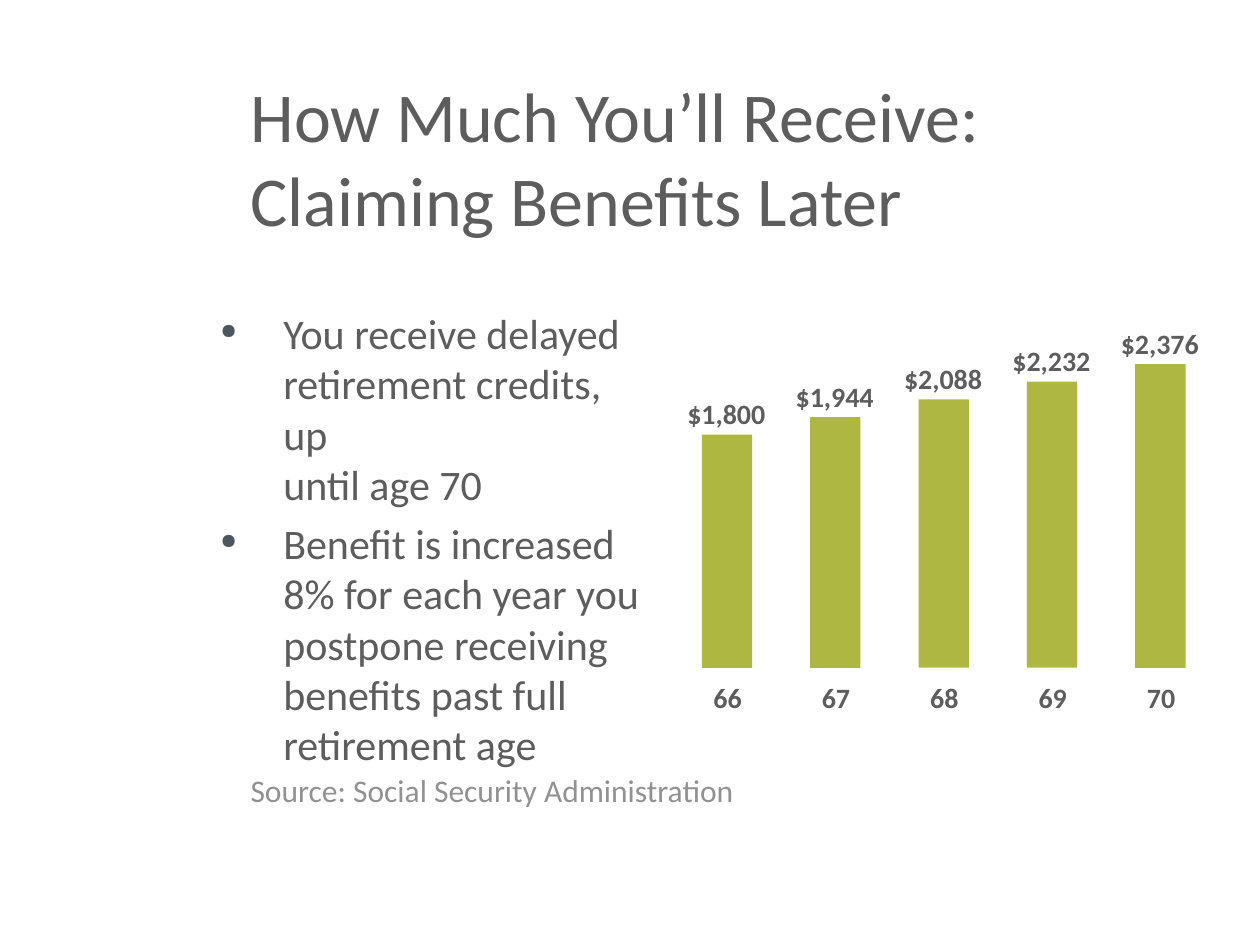
from lxml import etree
from pptx import Presentation
from pptx import util as u
from pptx.dml.color import RGBColor
from pptx.enum import shapes, text
from pptx.oxml import ns

GREY, LIGHT, GREEN, BULLET = "5D5D5D", "919191", "AFB743", "4D565C"
BENEFITS = {"66": "$1,800", "67": "$1,944", "68": "$2,088", "69": "$2,232", "70": "$2,376"}
STEP, BASE, FIRST_HEIGHT, RISE = 0.86, 5.3, 1.85, 0.14


def color(value):
    """Return the colour for a hex string."""
    return RGBColor.from_string(value)


def add_runs(p, content, size, fill=GREY, bold=False):
    """Add the content to a paragraph, with a line break at each newline."""
    for i, line in enumerate(content.split("\n")):
        if i:
            p.add_line_break()
        r = p.add_run()
        r.text = line
        r.font.name = "Calibri"
        r.font.size = u.Pt(size)
        r.font.bold = bold
        r.font.color.rgb = color(fill)


def add_frame(s, x, y, w, h, wrap=True):
    """Add an empty text box and return its text frame."""
    tf = s.shapes.add_textbox(*map(u.Inches, (x, y, w, h))).text_frame
    tf.word_wrap = wrap
    return tf


def add_label(s, content, box, size=16, fill=GREY, bold=True, wrap=True,
              align=text.PP_ALIGN.CENTER):
    """Add a text box with one paragraph and return its text frame."""
    tf = add_frame(s, *box, wrap)
    p = tf.paragraphs[0]
    p.alignment = align
    add_runs(p, content, size, fill, bold)
    return tf


def add_bullet(p):
    """Give a paragraph a hanging indent and a small round bullet."""
    pPr = p._p.get_or_add_pPr()
    pPr.set("marL", str(u.Inches(0.5)))
    pPr.set("indent", str(-u.Inches(0.5)))
    clr = etree.SubElement(pPr, ns.qn("a:buClr"))
    etree.SubElement(clr, ns.qn("a:srgbClr"), val=BULLET)
    etree.SubElement(pPr, ns.qn("a:buSzPct"), val="50000")
    etree.SubElement(pPr, ns.qn("a:buChar"), char="●")


def add_bullets(s, items, box):
    """Add a text box with a bulleted list."""
    tf = add_frame(s, *box)
    for i, item in enumerate(items):
        p = tf.add_paragraph() if i else tf.paragraphs[0]
        add_bullet(p)
        if i:
            p.space_before = u.Pt(4.8)
        add_runs(p, item, 24)


def add_bar(s, x, y, w, h):
    """Add one plain bar."""
    sp = s.shapes.add_shape(shapes.MSO_SHAPE.RECTANGLE, *map(u.Inches, (x, y, w, h)))
    sp.shadow.inherit = False
    sp.fill.solid()
    sp.fill.fore_color.rgb = color(GREEN)
    sp.line.fill.background()


def add_benefit_bars(s):
    """Add a bar with its age and benefit for each claiming age."""
    for i, (age, benefit) in enumerate(BENEFITS.items()):
        x, h = 5.57 + i * STEP, FIRST_HEIGHT + i * RISE
        add_bar(s, x, BASE - h, 0.4, h)
        add_label(s, age, (x - 0.07, BASE + 0.05, 0.55, 0.37))
        add_label(s, benefit, (x - 0.22, BASE - h - 0.35, 0.83, 0.37), wrap=False)


def main():
    """Build the slide and save it."""
    prs = Presentation()
    prs.slide_width, prs.slide_height = u.Inches(10), u.Inches(7.5)
    s = prs.slides.add_slide(prs.slide_layouts[6])
    left = text.PP_ALIGN.LEFT
    tf = add_label(s, "How Much You’ll Receive: \nClaiming Benefits Later",
                   (1.89, 0.58, 6.7, 1.33), 40, bold=False, align=left)
    tf.vertical_anchor = text.MSO_ANCHOR.MIDDLE
    add_bullets(s, [
        "You receive delayed retirement credits, up\nuntil age 70",
        "Benefit is increased \n8% for each year you postpone receiving "
        "benefits past full retirement age",
    ], (1.65, 2.39, 3.64, 3.42))
    add_benefit_bars(s)
    add_label(s, "Source: Social Security Administration", (1.89, 6.07, 4.08, 0.4),
              18, LIGHT, bold=False, wrap=False, align=left)
    prs.save("out.pptx")


if __name__ == "__main__":
    main()
